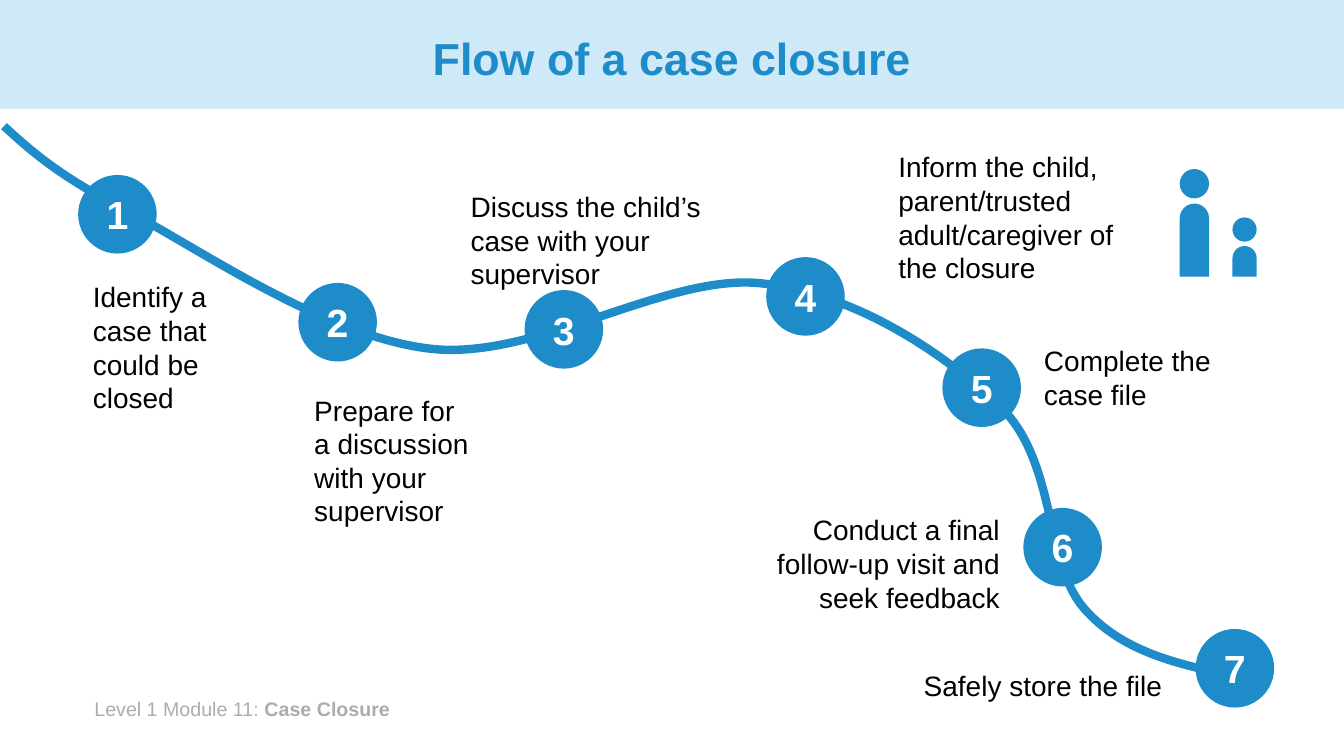
from dataclasses import dataclass
from typing import Any, NamedTuple

from lxml.etree import SubElement
from pptx import Presentation
from pptx.dml.color import RGBColor
from pptx.enum.shapes import MSO_SHAPE as Shp
from pptx.enum.text import MSO_ANCHOR as Anchor, MSO_AUTO_SIZE as Auto, PP_ALIGN as Align
from pptx.oxml.ns import qn
from pptx.util import Cm, Pt


@dataclass(frozen=True)
class Theme:
    font: str = "Arial"
    blue: RGBColor = RGBColor(0x1D, 0x8C, 0xC8)
    pale: RGBColor = RGBColor(0xCE, 0xE9, 0xF8)
    grey: RGBColor = RGBColor(0xAF, 0xAB, 0xAB)
    black: RGBColor = RGBColor(0, 0, 0)
    white: RGBColor = RGBColor(255, 255, 255)
    title: Pt = Pt(32)
    number: Pt = Pt(28)
    label: Pt = Pt(20)
    footer: Pt = Pt(14)
    path_line: Pt = Pt(6)


class Box(NamedTuple):
    left: float
    top: float
    width: float
    height: float


class Point(NamedTuple):
    x: float
    y: float


class Curve(NamedTuple):
    control1: Point
    control2: Point
    end: Point


@dataclass(frozen=True)
class Step:
    badge: Point
    label: Box
    text: str
    align: Align = Align.LEFT
    right_inset: float = 0.25


@dataclass(frozen=True)
class Person:
    left: float
    width: float
    head_top: float
    body_top: float


THEME = Theme()
BADGE = 1.98
FEET = 6.97

STEPS = [
    Step(Point(1.97, 4.41), Box(2.09, 6.93, 4.01, 3.68), "Identify a case that could be closed"),
    Step(Point(7.52, 7.13), Box(7.67, 9.78, 5.66, 3.68),
         "Prepare for a discussion with your supervisor", right_inset=1.41),
    Step(Point(13.22, 7.31), Box(11.61, 4.65, 7.24, 2.82), "Discuss the child’s case with your supervisor"),
    Step(Point(19.31, 6.48), Box(22.39, 3.65, 8.79, 3.68),
         "Inform the child, parent/trusted adult/caregiver of the closure", right_inset=2.44),
    Step(Point(23.75, 8.78), Box(26.06, 8.53, 5.28, 1.96), "Complete the case file"),
    Step(Point(25.79, 12.8), Box(19.1, 12.8, 6.35, 2.82),
         "Conduct a final follow-up visit and seek feedback", Align.RIGHT),
    Step(Point(30.13, 15.85), Box(21.92, 16.71, 7.62, 1.12), "Safely store the file", Align.RIGHT),
]

PATH_START = Point(0.1, 3.18)
PATH = [
    Curve(Point(0.76, 3.78), Point(1.45, 4.42), Point(3.23, 5.33)),
    Curve(Point(5.03, 6.27), Point(8.18, 8.48), Point(10.85, 8.79)),
    Curve(Point(13.51, 9.09), Point(16.79, 6.88), Point(19.18, 7.14)),
    Curve(Point(21.59, 7.39), Point(23.9, 8.97), Point(25.27, 10.31)),
    Curve(Point(26.62, 11.68), Point(26.34, 14.2), Point(27.31, 15.32)),
    Curve(Point(28.27, 16.43), Point(29.69, 16.74), Point(31.12, 17.04)),
]

PEOPLE = [Person(29.73, 0.74, 4.26, 5.13), Person(31.06, 0.61, 5.48, 6.2)]


def apply(target: Any, values: dict[str, Any]) -> None:
    for name, value in values.items():
        setattr(target, name, value)


def emu(box: Box) -> list[Cm]:
    return [Cm(v) for v in box]


def write(p: Any, text: str, size: Pt, color: RGBColor, bold: bool = False) -> None:
    r = p.add_run()
    r.text = text
    apply(r.font, {"name": THEME.font, "size": size, "bold": bold})
    r.font.color.rgb = color


def add_filled(shapes: Any, kind: Shp, box: Box, color: RGBColor) -> Any:
    sp = shapes.add_shape(kind, *emu(box))
    sp.shadow.inherit = False
    sp.fill.solid()
    sp.fill.fore_color.rgb = color
    sp.line.fill.background()
    return sp


def add_text(shapes: Any, box: Box, align: Align = Align.LEFT, right_inset: float = 0.25) -> Any:
    tf = shapes.add_textbox(*emu(box)).text_frame
    apply(tf, {"word_wrap": True, "auto_size": Auto.SHAPE_TO_FIT_TEXT, "margin_right": Cm(right_inset)})
    p = tf.paragraphs[0]
    p.alignment = align
    return p


def add_title(slide: Any, text: str) -> None:
    sp = slide.shapes.title
    left, top, width, height = emu(Box(2.33, 0.33, 29.21, 2.41))
    apply(sp, {"left": left, "top": top, "width": width, "height": height})
    apply(sp.text_frame, {"vertical_anchor": Anchor.MIDDLE, "word_wrap": True, "auto_size": Auto.NONE})
    p = sp.text_frame.paragraphs[0]
    apply(p, {"alignment": Align.CENTER, "line_spacing": 0.9})
    write(p, text, THEME.title, THEME.blue, True)


def add_path(shapes: Any) -> None:
    builder = shapes.build_freeform(Cm(PATH_START.x), Cm(PATH_START.y))
    builder.add_line_segments([(Cm(c.end.x), Cm(c.end.y)) for c in PATH], close=False)
    sp = builder.convert_to_shape()
    for segment, curve in zip(list(sp._element.iter(qn("a:lnTo"))), PATH):
        segment.tag = qn("a:cubicBezTo")
        segment.remove(segment[0])
        for point in curve:
            SubElement(segment, qn("a:pt"), x=str(Cm(point.x) - sp.left), y=str(Cm(point.y) - sp.top))
    sp.shadow.inherit = False
    sp.fill.background()
    sp.line.color.rgb = THEME.blue
    sp.line.width = THEME.path_line


def add_step(shapes: Any, number: int, step: Step) -> None:
    label = add_text(shapes, step.label, step.align, step.right_inset)
    write(label, step.text, THEME.label, THEME.black)
    tf = add_filled(shapes, Shp.OVAL, Box(*step.badge, BADGE, BADGE), THEME.blue).text_frame
    apply(tf, {"vertical_anchor": Anchor.MIDDLE, "margin_left": 0, "margin_right": 0})
    p = tf.paragraphs[0]
    p.alignment = Align.CENTER
    write(p, str(number), THEME.number, THEME.white, True)


def add_person(shapes: Any, person: Person) -> None:
    head = Box(person.left, person.head_top, person.width, person.width)
    body = Box(person.left, person.body_top, person.width, FEET - person.body_top)
    add_filled(shapes, Shp.OVAL, head, THEME.blue)
    sp = add_filled(shapes, Shp.ROUND_2_SAME_RECTANGLE, body, THEME.blue)
    sp.adjustments[0] = 0.5


def main() -> None:
    prs = Presentation()
    apply(prs, {"slide_width": Cm(33.87), "slide_height": Cm(19.05)})
    slide = prs.slides.add_slide(prs.slide_layouts[5])
    shapes = slide.shapes

    band = add_filled(shapes, Shp.RECTANGLE, Box(0, 0, 33.87, 2.74), THEME.pale)
    shapes.title._element.addprevious(band._element)
    add_title(slide, "Flow of a case closure")

    p = add_text(shapes, Box(2.13, 17.44, 11.56, 0.86))
    write(p, "Level 1 Module 11: ", THEME.footer, THEME.grey)
    write(p, "Case Closure", THEME.footer, THEME.grey, True)

    add_path(shapes)
    for number, step in enumerate(STEPS, 1):
        add_step(shapes, number, step)
    group = shapes.add_group_shape()
    for person in PEOPLE:
        add_person(group.shapes, person)

    prs.save("out.pptx")


if __name__ == "__main__":
    main()
